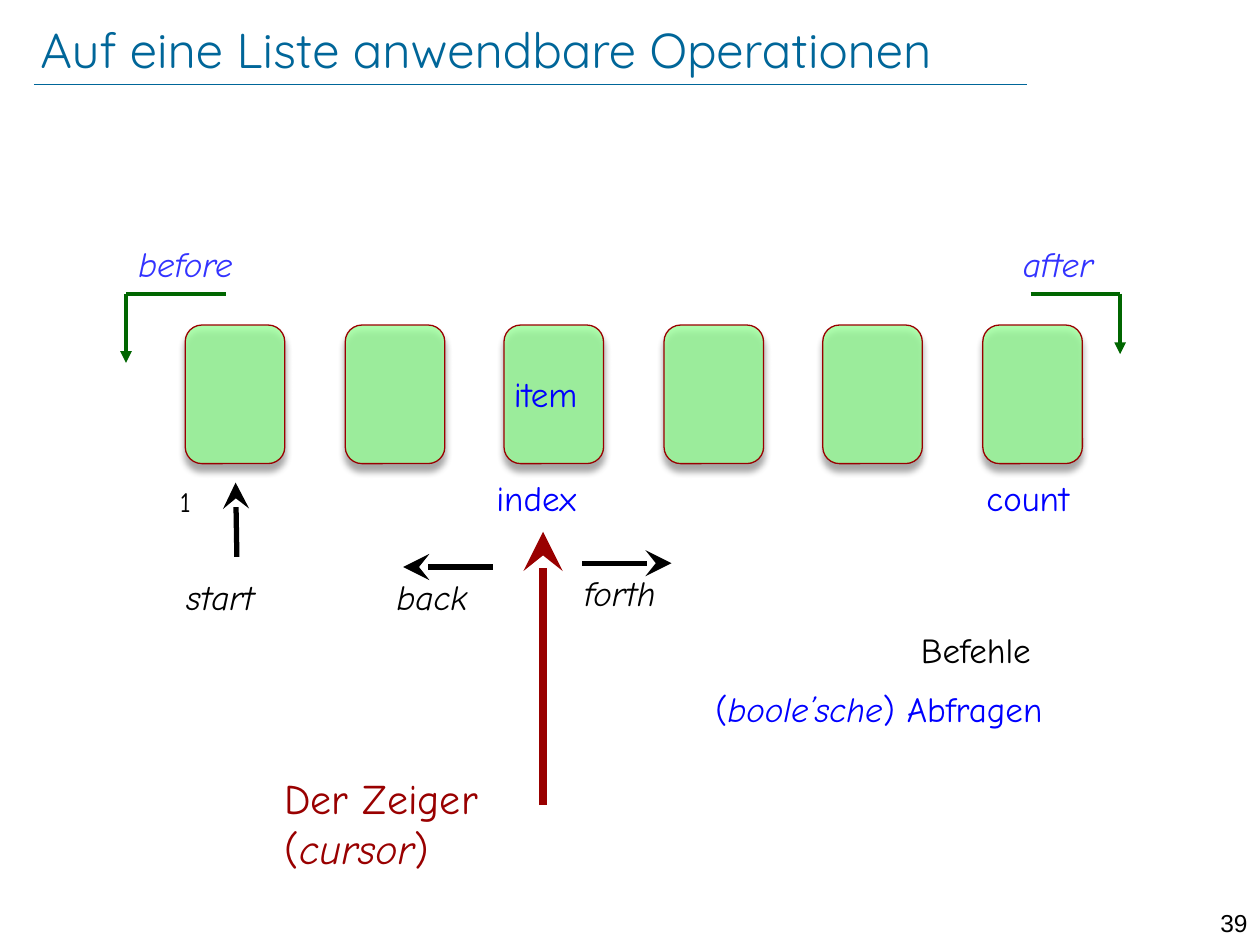
"""Build the slide on the operations that can be applied to a list."""
from dataclasses import dataclass
from typing import Optional

from lxml.etree import SubElement
from pptx import Presentation
from pptx.dml.color import RGBColor
from pptx.enum.shapes import MSO_CONNECTOR, MSO_SHAPE
from pptx.enum.text import MSO_ANCHOR, PP_ALIGN
from pptx.oxml.ns import qn
from pptx.util import Inches, Pt

BLACK, BLUE, VIOLET, RED, GREEN = "000000", "0000FF", "3333FF", "990000", "006600"
TITLE_BLUE, CARD_GREEN = "006699", "99FF99"
CARD_COUNT, CARD_LEFT, CARD_PITCH = 6, 1.47, 1.266


@dataclass
class Label:
    left: float
    top: float
    width: float
    phrases: list[tuple[str, bool]]
    color: str
    height: float = 0.37
    size: int = 20
    font: str = "Comic Neue"
    line_spacing: float = 0.8
    align: PP_ALIGN = PP_ALIGN.LEFT


@dataclass
class Stroke:
    start: tuple[float, float]
    end: tuple[float, float]
    color: str
    weight: float
    head: Optional[str] = None
    head_size: str = "lg"


LABELS = [
    Label(3.98, 2.97, 1.02, [("item", False)], BLUE),
    Label(1, 1.94, 1.18, [("before", True)], VIOLET),
    Label(8.02, 1.94, 1.02, [("after", True)], VIOLET),
    Label(7.73, 3.8, 1.02, [("count", False)], BLUE),
    Label(3.84, 3.8, 1.02, [("index", False)], BLUE),
    Label(4.54, 4.55, 1.02, [("forth", True)], BLACK),
    Label(3.05, 4.58, 1.02, [("back", True)], BLACK),
    Label(1.38, 4.58, 1.02, [("start", True)], BLACK),
    Label(7.21, 5, 1.92, [("Befehle", False)], BLACK),
    Label(5.58, 5.47, 3.18,
          [("(", False), ("boole’sche", True), (") Abfragen", False)], BLUE),
    Label(1.33, 3.8, 0.5, [("1", False)], BLACK, size=16, line_spacing=1),
    Label(2.16, 6.08, 2.22,
          [("Der Zeiger (", False), ("cursor", True), (")", False)], RED,
          height=0.91, size=24, line_spacing=1),
    Label(9.3, 7.16, 0.7, [("39", False)], BLACK, height=0.24, size=14,
          font="Arial", line_spacing=1, align=PP_ALIGN.RIGHT),
]

STROKES = [
    Stroke((0.27, 0.67), (8.15, 0.67), TITLE_BLUE, 0.25),
    Stroke((1, 2.33), (1, 2.88), GREEN, 2.25, "triangle", "med"),
    Stroke((1, 2.33), (1.79, 2.33), GREEN, 2.25),
    Stroke((8.18, 2.33), (8.89, 2.33), GREEN, 2.25),
    Stroke((8.89, 2.33), (8.89, 2.81), GREEN, 2.25, "triangle", "med"),
    Stroke((4.31, 6.39), (4.31, 4.22), RED, 4.5, "stealth"),
    Stroke((4.62, 4.47), (5.33, 4.47), BLACK, 3, "stealth"),
    Stroke((3.91, 4.5), (3.2, 4.5), BLACK, 3, "stealth"),
    Stroke((1.88, 4.42), (1.87, 3.83), BLACK, 3, "stealth"),
]


def rgb(color: str) -> RGBColor:
    return RGBColor.from_string(color)


def add_alpha(color_element, percent: int) -> None:
    SubElement(color_element, qn("a:alpha"), val=str(percent * 1000))


def add_title(slide, wording: str) -> None:
    title = slide.shapes.title
    title.left, title.top = Inches(0.32), Inches(0.13)
    title.width, title.height = Inches(8.54), Inches(0.51)
    frame = title.text_frame
    frame.text = wording
    frame.word_wrap = True
    frame.vertical_anchor = MSO_ANCHOR.MIDDLE
    frame.margin_left = frame.margin_right = frame.margin_top = frame.margin_bottom = 0
    heading = frame.paragraphs[0]
    heading.alignment = PP_ALIGN.LEFT
    heading.font.name, heading.font.size = "Quicksand", Pt(28)
    heading.font.color.rgb = rgb(TITLE_BLUE)


def add_card(slide, left: float) -> None:
    card = slide.shapes.add_shape(MSO_SHAPE.ROUNDED_RECTANGLE, Inches(left),
                                  Inches(2.58), Inches(0.79), Inches(1.1))
    card.adjustments[0] = 0.167
    card.fill.solid()
    card.fill.fore_color.rgb = rgb(CARD_GREEN)
    card.line.color.rgb = rgb(RED)
    card.line.width = Pt(0.75)
    card.shadow.inherit = False
    properties = card._element.spPr
    add_alpha(properties.find(qn("a:solidFill"))[0], 79)
    shadow = SubElement(properties.find(qn("a:effectLst")), qn("a:outerShdw"),
                        blurRad=str(Pt(4)), dist=str(Pt(4)), dir="5400000",
                        rotWithShape="0")
    add_alpha(SubElement(shadow, qn("a:srgbClr"), val=BLACK), 43)


def add_stroke(slide, stroke: Stroke) -> None:
    connector = slide.shapes.add_connector(
        MSO_CONNECTOR.STRAIGHT, *map(Inches, stroke.start + stroke.end))
    connector.line.color.rgb = rgb(stroke.color)
    connector.line.width = Pt(stroke.weight)
    properties = connector._element.spPr
    if stroke.head:
        SubElement(properties.find(qn("a:ln")), qn("a:tailEnd"),
                   type=stroke.head, w=stroke.head_size, len=stroke.head_size)
    SubElement(properties, qn("a:effectLst"))


def add_label(slide, label: Label) -> None:
    box = slide.shapes.add_textbox(*map(
        Inches, (label.left, label.top, label.width, label.height)))
    box.text_frame.word_wrap = True
    paragraph = box.text_frame.paragraphs[0]
    paragraph.alignment = label.align
    paragraph.line_spacing = label.line_spacing
    paragraph.font.name, paragraph.font.size = label.font, Pt(label.size)
    paragraph.font.color.rgb = rgb(label.color)
    for wording, italic in label.phrases:
        run = paragraph.add_run()
        run.text = wording
        run.font.italic = italic


def main() -> None:
    presentation = Presentation()
    presentation.slide_width, presentation.slide_height = Inches(10), Inches(7.5)
    slide = presentation.slides.add_slide(presentation.slide_layouts[5])
    add_title(slide, "Auf eine Liste anwendbare Operationen")
    for position in range(CARD_COUNT):
        add_card(slide, round(CARD_LEFT + position * CARD_PITCH, 2))
    for stroke in STROKES:
        add_stroke(slide, stroke)
    for label in LABELS:
        add_label(slide, label)
    presentation.save("out.pptx")


if __name__ == "__main__":
    main()
